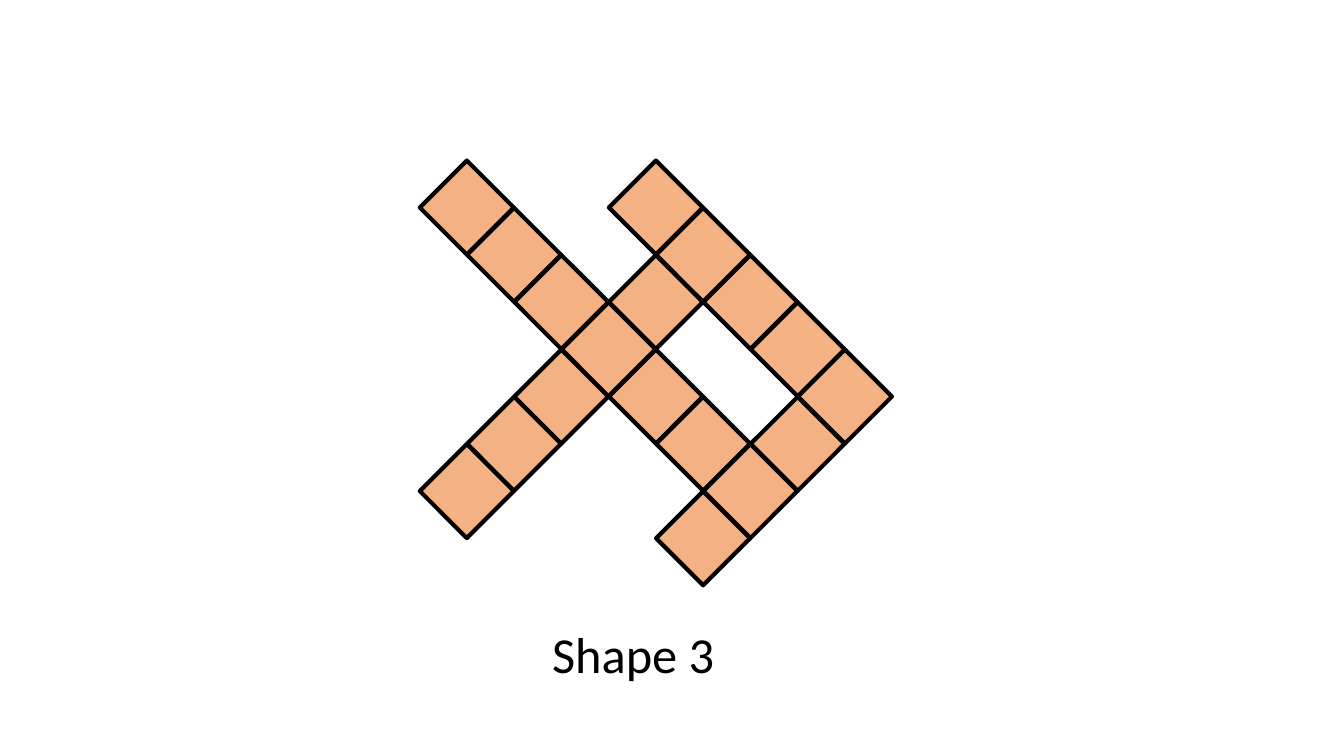
from pptx import Presentation
from pptx.dml.color import RGBColor
from pptx.enum.shapes import MSO_SHAPE
from pptx.enum.text import MSO_ANCHOR, PP_ALIGN
from pptx.util import Inches, Pt

BLACK = RGBColor(0x00, 0x00, 0x00)
WHITE = RGBColor(0xFF, 0xFF, 0xFF)
ORANGE = RGBColor(0xF4, 0xB1, 0x83)

GRID_LEFT, GRID_TOP = 4.3, 1.73
GRID_STEP = 3.75 / 8
TILE_SIDE = 0.66

# Diagonal strips: first column, first row, row change per tile, tile count
STRIPS = [
    (0, 0, 1, 7),
    (4, 0, 1, 5),
    (0, 6, -1, 6),
    (5, 7, -1, 4),
]


def write_text(shape, text, font="Calibri", size=36, color=BLACK,
               align=PP_ALIGN.CENTER, anchor=MSO_ANCHOR.MIDDLE):
    frame = shape.text_frame
    frame.word_wrap = True
    frame.vertical_anchor = anchor
    paragraph = frame.paragraphs[0]
    paragraph.alignment = align
    paragraph.line_spacing = 1.0
    run = paragraph.add_run()
    run.text = text
    run.font.name = font
    run.font.size = Pt(size)
    run.font.color.rgb = color


class PatternSlide:
    def __init__(self, presentation, fill=ORANGE, outline=BLACK, outline_width=3):
        self.slide = presentation.slides.add_slide(presentation.slide_layouts[5])
        self.slide.background.fill.solid()
        self.slide.background.fill.fore_color.rgb = WHITE
        self.fill = fill
        self.outline = outline
        self.outline_width = outline_width

    def add_title(self, text, left, top, width, height):
        title = self.slide.shapes.title
        title.left, title.top = Inches(left), Inches(top)
        title.width, title.height = Inches(width), Inches(height)
        write_text(title, text)

    def add_tile(self, column, row):
        tile = self.slide.shapes.add_shape(
            MSO_SHAPE.RECTANGLE,
            Inches(GRID_LEFT + column * GRID_STEP),
            Inches(GRID_TOP + row * GRID_STEP),
            Inches(TILE_SIDE), Inches(TILE_SIDE))
        tile.rotation = 45
        tile.shadow.inherit = False
        tile.fill.solid()
        tile.fill.fore_color.rgb = self.fill
        tile.line.color.rgb = self.outline
        tile.line.width = Pt(self.outline_width)

    def add_strips(self, strips):
        """Draw every tile once, even where strips cross."""
        cells = {(column + i, row + i * direction)
                 for column, row, direction, count in strips
                 for i in range(count)}
        for column, row in sorted(cells):
            self.add_tile(column, row)


def main():
    presentation = Presentation()
    presentation.slide_width = Inches(13.33)
    presentation.slide_height = Inches(7.5)
    pattern = PatternSlide(presentation)
    pattern.add_strips(STRIPS)
    pattern.add_title("Shape 3", 4.48, 6.13, 3.6, 0.71)
    presentation.save("out.pptx")


if __name__ == "__main__":
    main()
